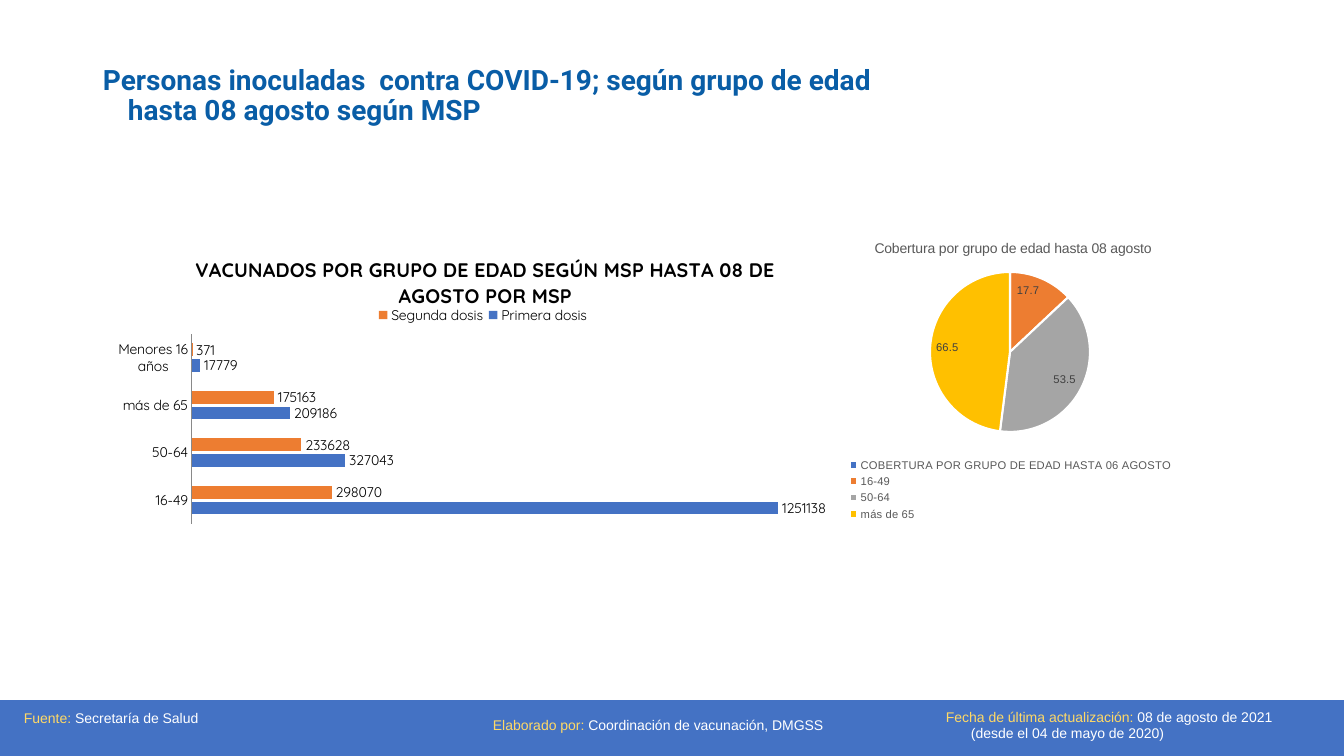
from lxml.etree import SubElement
from pptx import Presentation
from pptx.chart.data import CategoryChartData
from pptx.dml.color import RGBColor
from pptx.enum.chart import XL_CHART_TYPE, XL_LABEL_POSITION, XL_LEGEND_POSITION, XL_TICK_MARK
from pptx.enum.shapes import MSO_SHAPE
from pptx.enum.text import MSO_ANCHOR
from pptx.oxml.ns import qn
from pptx.util import Pt

PX = 914400 / 100.8
BLUE = RGBColor(0x44, 0x72, 0xC4)
ORANGE = RGBColor(0xED, 0x7D, 0x31)
GRAY = RGBColor(0xA5, 0xA5, 0xA5)
GOLD = RGBColor(0xFF, 0xC0, 0x00)
PALE_GOLD = RGBColor(0xFF, 0xD9, 0x66)
TITLE_BLUE = RGBColor(0x09, 0x5D, 0xA6)
AXIS_GRAY = RGBColor(0x89, 0x89, 0x89)
TEXT_GRAY = RGBColor(0x59, 0x59, 0x59)
LABEL_GRAY = RGBColor(0x40, 0x40, 0x40)
WHITE = RGBColor(0xFF, 0xFF, 0xFF)
BLACK = RGBColor(0, 0, 0)


def emu(*lengths):
    return [round(n * PX) for n in lengths]


def style(font, color, **values):
    for name, value in values.items():
        setattr(font, name, value)
    font.color.rgb = color


def add_text(s, box, runs, anchor, **values):
    """Add one hanging paragraph from (text, colour) pairs."""
    tf = s.shapes.add_textbox(*emu(*box)).text_frame
    tf.word_wrap = True
    tf.vertical_anchor = anchor
    p = tf.paragraphs[0]
    p.line_spacing = 0.9
    indent, = emu(25)
    p_pr = p._p.get_or_add_pPr()
    p_pr.set("marL", str(indent))
    p_pr.set("indent", str(-indent))
    for text, color in runs:
        r = p.add_run()
        r.text = text
        style(r.font, color, **values)


def place_part(chart, tag, box, area):
    """Fix a chart part at a slide area, given the chart's box."""
    part = chart.element.find(".//" + qn(tag))
    for old in part.findall(qn("c:layout")):
        part.remove(old)
    layout = SubElement(part, qn("c:layout"))
    part.insert(0 if tag == "c:plotArea" else 1, layout)
    manual = SubElement(layout, qn("c:manualLayout"))
    if tag == "c:plotArea":
        SubElement(manual, qn("c:layoutTarget")).set("val", "inner")
    for axis in "xy":
        SubElement(manual, qn(f"c:{axis}Mode")).set("val", "edge")
    left, top, width, height = box
    fractions = zip("xywh", area, (left, top, 0, 0), (width, height, width, height))
    for name, length, start, whole in fractions:
        SubElement(manual, qn(f"c:{name}")).set("val", f"{(length - start) / whole:.4f}")


def add_chart(s, box, kind, data, title, title_style, legend_style, position, areas):
    """Add a chart with its title and legend, its parts placed by areas."""
    chart = s.shapes.add_chart(kind, *emu(*box), data).chart
    style(chart.font, **legend_style)
    chart.has_title = True
    chart.chart_title.include_in_layout = False
    r = chart.chart_title.text_frame.paragraphs[0].add_run()
    r.text = title
    style(r.font, **title_style)
    chart.has_legend = True
    chart.legend.position = position
    chart.legend.include_in_layout = False
    style(chart.legend.font, **legend_style)
    for tag, area in areas.items():
        place_part(chart, tag, box, area)
    return chart


def add_dose_chart(s, box):
    left, top, width, height = box
    data = CategoryChartData(number_format="General")
    data.categories = ["16-49", "50-64", "más de 65", "Menores 16 años"]
    data.add_series("Primera dosis", [1251138, 327043, 209186, 17779])
    data.add_series("Segunda dosis", [298070, 233628, 175163, 371])
    text = dict(color=BLACK, name="Quicksand", size=Pt(10), bold=False)
    chart = add_chart(
        s, box, XL_CHART_TYPE.BAR_CLUSTERED, data,
        "VACUNADOS POR GRUPO DE EDAD SEGÚN MSP HASTA 08 DE AGOSTO POR MSP",
        {**text, "size": Pt(14), "bold": True}, text, XL_LEGEND_POSITION.TOP,
        {"c:title": (left + 89, top + 30),
         "c:legend": (left + 270, top + 83, 220, 20),
         "c:plotArea": (left + 89, top + 112, 656, 190)})
    plot = chart.plots[0]
    plot.gap_width = 150
    plot.overlap = -25
    plot.vary_by_categories = False
    plot.has_data_labels = True
    plot.data_labels.show_value = True
    plot.data_labels.position = XL_LABEL_POSITION.OUTSIDE_END
    style(plot.data_labels.font, **text)
    for series, color in zip(plot.series, (BLUE, ORANGE)):
        series.format.fill.solid()
        series.format.fill.fore_color.rgb = color
        series.invert_if_negative = False
    values = chart.value_axis
    values.minimum_scale = 0
    values.maximum_scale = 1400000
    values.has_major_gridlines = False
    values.visible = False
    ages = chart.category_axis
    ages.major_tick_mark = ages.minor_tick_mark = XL_TICK_MARK.NONE
    ages.format.line.color.rgb = AXIS_GRAY
    style(ages.tick_labels.font, **text)


def add_coverage_chart(s, box):
    left, top, width, height = box
    data = CategoryChartData(number_format="0.0")
    data.categories = ["COBERTURA POR GRUPO DE EDAD HASTA 06 AGOSTO",
                       "16-49", "50-64", "más de 65"]
    data.add_series("Series 1", [None, 13, 39, 48])
    text = dict(color=TEXT_GRAY, name="Arial", size=Pt(8), bold=False)
    chart = add_chart(
        s, box, XL_CHART_TYPE.PIE, data,
        "Cobertura por grupo de edad hasta 08 agosto",
        {**text, "size": Pt(10)}, text, XL_LEGEND_POSITION.BOTTOM,
        {"c:title": (left + 136, top + 15),
         "c:legend": (left + 110, top + 233, 330, 69),
         "c:plotArea": (left + 194, top + 50, 160, 160)})
    plot = chart.plots[0]
    plot.vary_by_categories = True
    labels = [None, "17.7", "53.5", "66.5"]
    for i, (color, label) in enumerate(zip((BLUE, ORANGE, GRAY, GOLD), labels)):
        point = plot.series[0].points[i]
        point.format.fill.solid()
        point.format.fill.fore_color.rgb = color
        point.format.line.color.rgb = WHITE
        point.format.line.width = Pt(1.5)
        if label:
            r = point.data_label.text_frame.paragraphs[0].add_run()
            r.text = label
            style(r.font, **{**text, "color": LABEL_GRAY})
            point.data_label.position = XL_LABEL_POSITION.INSIDE_END


def add_footer(s, box):
    left, top, width, height = box
    band = s.shapes.add_shape(MSO_SHAPE.RECTANGLE, *emu(*box))
    band.shadow.inherit = False
    band.fill.solid()
    band.fill.fore_color.rgb = BLUE
    band.line.fill.background()
    notes = [
        (14, 435, MSO_ANCHOR.TOP, "Fuente: ", "Secretaría de Salud"),
        (483, 435, MSO_ANCHOR.MIDDLE, "Elaborado por: ", "Coordinación de vacunación, DMGSS"),
        (936, 392, MSO_ANCHOR.MIDDLE, "Fecha de última actualización: ",
         "08 de agosto de 2021  (desde el 04 de mayo de 2020)"),
    ]
    for x, w, anchor, caption, detail in notes:
        add_text(s, (left + x, top + 6, w, 40), [(caption, PALE_GOLD), (detail, WHITE)],
                 anchor, name="Arial", size=Pt(10))


def main():
    prs = Presentation()
    prs.slide_width, prs.slide_height = emu(1344, 756)
    s = prs.slides.add_slide(prs.slide_layouts[6])
    add_footer(s, (0, 700, 1344, 56))
    add_text(s, (93, 61, 853, 57),
             [("Personas inoculadas  contra COVID-19; según grupo de edad "
               "hasta 08 agosto según MSP", TITLE_BLUE)],
             MSO_ANCHOR.TOP, name="Roboto", size=Pt(20), bold=True)
    add_dose_chart(s, (103, 222, 760, 308))
    add_coverage_chart(s, (736, 222, 549, 302))
    prs.save("out.pptx")


if __name__ == "__main__":
    main()
